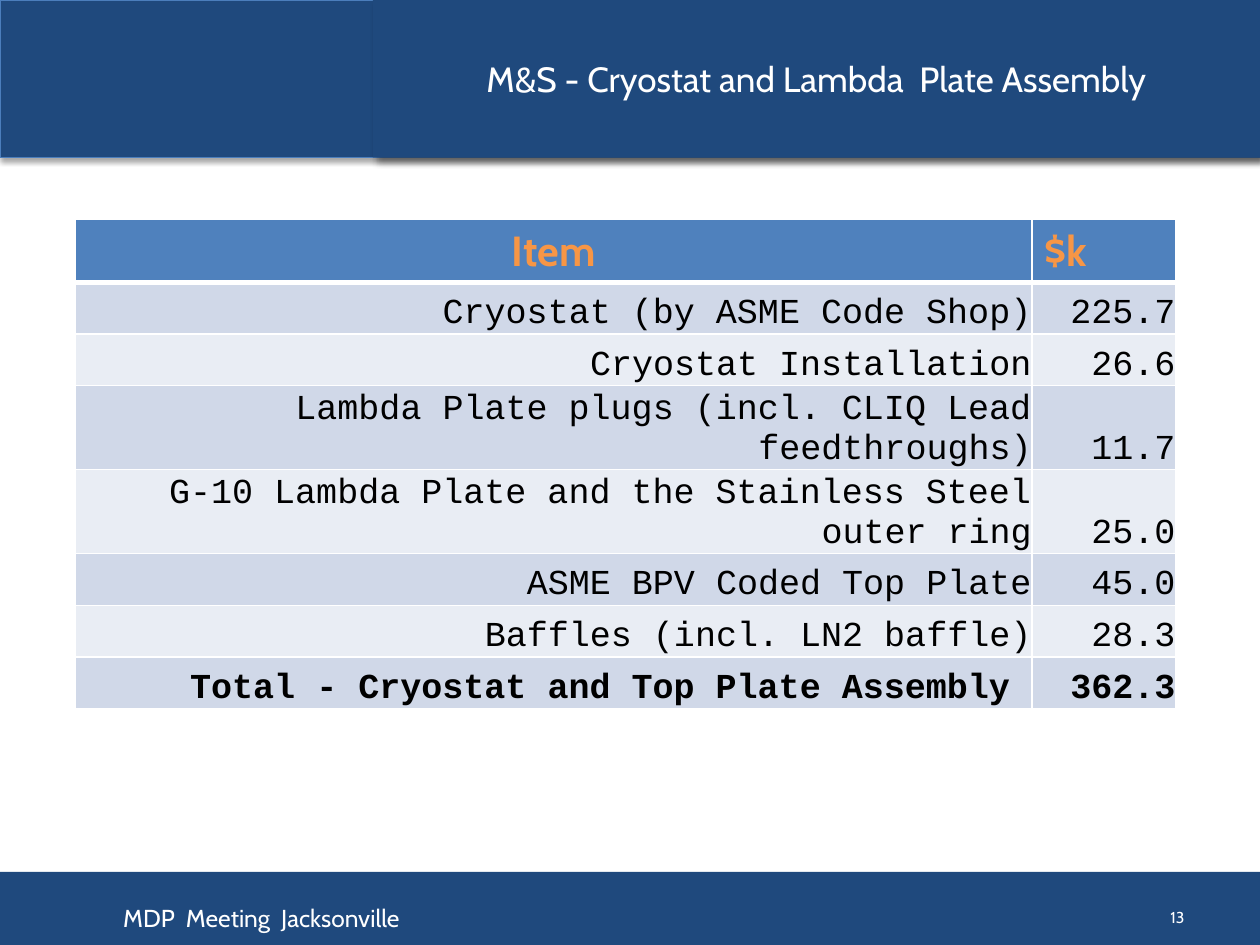
from lxml.etree import SubElement
from pptx import Presentation
from pptx.dml.color import RGBColor
from pptx.enum.shapes import MSO_SHAPE
from pptx.enum.text import MSO_ANCHOR, PP_ALIGN
from pptx.oxml.ns import qn
from pptx.util import Inches, Pt

COLORS = {
    "navy": "1F497D",
    "edge": "4B7EBC",
    "header": "4F81BD",
    "orange": "F79646",
    "band_dark": "D0D8E8",
    "band_light": "E9EDF4",
    "white": "FFFFFF",
    "black": "000000",
}

COSTS = [
    ("Cryostat (by ASME Code Shop)", "225.7"),
    ("Cryostat Installation", "26.6"),
    ("Lambda Plate plugs (incl. CLIQ Lead feedthroughs)", "11.7"),
    ("G-10 Lambda Plate and the Stainless Steel outer ring", "25.0"),
    ("ASME BPV Coded Top Plate", "45.0"),
    ("Baffles (incl. LN2 baffle)", "28.3"),
    ("Total - Cryostat and Top Plate Assembly ", "362.3"),
]


def rgb(color):
    return RGBColor.from_string(COLORS[color])


class CostSlide:
    heading_font = "Cabin"
    body_font = "Courier New"

    def __init__(self, presentation):
        self.slide = presentation.slides.add_slide(presentation.slide_layouts[6])

    def set_text(self, frame, text, size, color="white", align=PP_ALIGN.LEFT, font=None, bold=False):
        paragraph = frame.paragraphs[0]
        paragraph.text = text
        paragraph.alignment = align
        paragraph.font.name = font or self.heading_font
        paragraph.font.size = Pt(size)
        paragraph.font.bold = bold
        paragraph.font.color.rgb = rgb(color)

    def band(self, left, top, width, height, edge=None, shadow=None):
        band = self.slide.shapes.add_shape(
            MSO_SHAPE.RECTANGLE, Inches(left), Inches(top), Inches(width), Inches(height)
        )
        band.fill.solid()
        band.fill.fore_color.rgb = rgb("navy")
        if edge:
            band.line.color.rgb = rgb(edge)
            band.line.width = Pt(0.75)
        else:
            band.line.fill.background()
        band.shadow.inherit = False
        if shadow:
            self.cast_shadow(band, *shadow)
        return band

    def cast_shadow(self, band, opacity, blur, distance, angle):
        effects = band.element.spPr.find(qn("a:effectLst"))
        outer = SubElement(
            effects, qn("a:outerShdw"), blurRad=str(Pt(blur)), dist=str(Pt(distance)),
            dir=str(angle * 60000), algn="ctr", rotWithShape="0",
        )
        tint = SubElement(outer, qn("a:srgbClr"), val=COLORS["black"])
        SubElement(tint, qn("a:alpha"), val=str(opacity * 1000))

    def label(self, left, top, width, height, text, size, align=PP_ALIGN.LEFT, anchor=MSO_ANCHOR.TOP):
        label = self.slide.shapes.add_textbox(Inches(left), Inches(top), Inches(width), Inches(height))
        label.text_frame.word_wrap = True
        label.text_frame.vertical_anchor = anchor
        self.set_text(label.text_frame, text, size, align=align)

    def cell(self, cell, fill, top=1, bottom=1):
        properties = cell._tc.get_or_add_tcPr()
        for side, width in (("L", 1), ("R", 1), ("T", top), ("B", bottom)):
            border = SubElement(properties, qn(f"a:ln{side}"), w=str(Pt(width)))
            solid = SubElement(border, qn("a:solidFill"))
            SubElement(solid, qn("a:srgbClr"), val=COLORS["white"])
        cell.fill.solid()
        cell.fill.fore_color.rgb = rgb(fill)

    def cost_table(self, left, top, widths, row_height, headings, costs):
        count = len(costs) + 1
        table = self.slide.shapes.add_table(
            count, len(widths), Inches(left), Inches(top), Inches(sum(widths)), Inches(row_height * count)
        ).table
        for column, width in zip(table.columns, widths):
            column.width = Inches(width)
        for column, (heading, align) in enumerate(headings):
            cell = table.cell(0, column)
            self.cell(cell, "header", bottom=3)
            self.set_text(cell.text_frame, heading, 24, "orange", align, bold=True)
        for row, cost in enumerate(costs, 1):
            for column, text in enumerate(cost):
                cell = table.cell(row, column)
                self.cell(cell, "band_dark" if row % 2 else "band_light", top=3 if row == 1 else 1)
                cell.margin_left = cell.margin_right = cell.margin_top = cell.margin_bottom = 0
                cell.vertical_anchor = MSO_ANCHOR.BOTTOM
                self.set_text(cell.text_frame, text, 20, "black", PP_ALIGN.RIGHT, self.body_font, row == len(costs))


def main():
    presentation = Presentation()
    presentation.slide_width = Inches(10)
    presentation.slide_height = Inches(7.5)
    page = CostSlide(presentation)
    page.band(0, 6.92, 10.02, 0.6)
    page.band(0, 0, 10, 1.25, edge="edge", shadow=(35, 3.1, 1.8, 90))
    page.label(8.93, 7.08, 0.57, 0.4, "13", 9, PP_ALIGN.RIGHT, MSO_ANCHOR.MIDDLE)
    title = page.band(2.96, 0, 7.04, 1.25, shadow=(43, 4, 3, 45))
    title.text_frame.vertical_anchor = MSO_ANCHOR.MIDDLE
    page.set_text(title.text_frame, "M&S - Cryostat and Lambda  Plate Assembly", 20, align=PP_ALIGN.CENTER)
    headings = [("Item", PP_ALIGN.CENTER), ("$k", PP_ALIGN.LEFT)]
    page.cost_table(0.6, 1.74, (7.59, 1.14), 0.41, headings, COSTS)
    page.label(0.88, 7.12, 6.57, 0.26, "MDP  Meeting  Jacksonville", 14)
    presentation.save("out.pptx")


if __name__ == "__main__":
    main()
